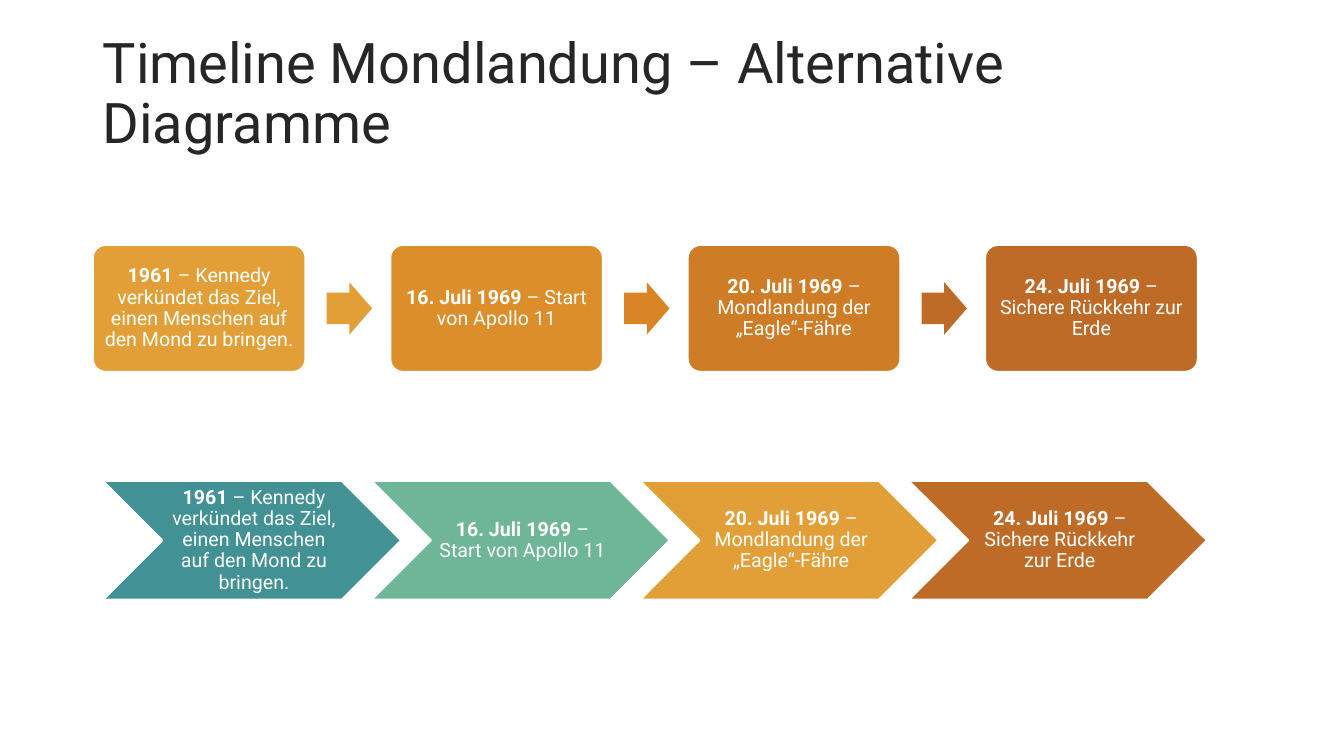
from pptx import Presentation
from pptx import util as u
from pptx.dml.color import RGBColor
from pptx.enum import shapes, text

COLORS = {
    "white": "FFFFFF",
    "ink": "262626",
    "teal": "419195",
    "green": "6EB697",
    "amber": "E29F37",
    "orange": "DC8E2B",
    "deep_orange": "D98526",
    "copper": "CF7C26",
    "rust": "BD6B27",
}

EVENTS = [
    ("1961", " – Kennedy verkündet das Ziel, einen Menschen auf den Mond zu bringen."),
    ("16. Juli 1969", " – Start von Apollo 11"),
    ("20. Juli 1969", " – Mondlandung der „Eagle“-Fähre"),
    ("24. Juli 1969", " – Sichere Rückkehr zur Erde"),
]


def color(name):
    return RGBColor.from_string(COLORS[name])


def write(frame, *parts, size, ink, align=text.PP_ALIGN.LEFT, bold_first=False,
          insets=(0.1, 0.05, 0.1, 0.05), font="Roboto"):
    frame.word_wrap = True
    frame.vertical_anchor = text.MSO_ANCHOR.MIDDLE
    (frame.margin_left, frame.margin_top,
     frame.margin_right, frame.margin_bottom) = map(u.Inches, insets)
    paragraph = frame.paragraphs[0]
    paragraph.alignment = align
    paragraph.line_spacing = 0.9
    for index, part in enumerate(parts):
        run = paragraph.add_run()
        run.text = part
        run.font.name = font
        run.font.size = u.Pt(size)
        run.font.bold = bold_first and index == 0
        run.font.color.rgb = color(ink)


class TimelineSlide:
    def __init__(self, deck):
        self.slide = deck.slides.add_slide(deck.slide_layouts[6])

    def title(self, words, *place):
        heading = self.slide.shapes.add_textbox(*map(u.Inches, place))
        write(heading.text_frame, words, size=40, ink="ink")

    def row(self):
        return self.slide.shapes.add_group_shape().shapes

    def block(self, row, kind, place, fill, adjustments, outlined=False):
        block = row.add_shape(kind, *map(u.Inches, place))
        block.shadow.inherit = False
        for index, value in enumerate(adjustments):
            block.adjustments[index] = value
        block.fill.solid()
        block.fill.fore_color.rgb = color(fill)
        if outlined:
            block.line.color.rgb = color("white")
            block.line.width = u.Pt(1.5)
        else:
            block.line.fill.background()
        return block

    def event(self, row, kind, place, fill, adjustments, event, insets):
        step = self.block(row, kind, place, fill, adjustments, outlined=True)
        write(step.text_frame, *event, size=14, ink="white", bold_first=True,
              align=text.PP_ALIGN.CENTER, insets=insets)

    def process(self, left, top, width, height, pitch, fills, arrow_fills):
        row = self.row()
        arrow_width, arrow_height = 0.45, 0.52
        for index, (event, fill) in enumerate(zip(EVENTS, fills)):
            x = left + index * pitch
            self.event(row, shapes.MSO_SHAPE.ROUNDED_RECTANGLE,
                       (x, top, width, height), fill, [0.1], event, [0.06] * 4)
            if index < len(arrow_fills):
                arrow_place = (x + width + 0.21, top + (height - arrow_height) / 2,
                               arrow_width, arrow_height)
                self.block(row, shapes.MSO_SHAPE.RIGHT_ARROW, arrow_place,
                           arrow_fills[index], [0.6, 0.5])

    def chevrons(self, left, top, width, height, fills):
        row = self.row()
        for index, (event, fill) in enumerate(zip(EVENTS, fills)):
            x = left + index * width * 0.9
            self.event(row, shapes.MSO_SHAPE.CHEVRON, (x, top, width, height),
                       fill, [0.5], event, (0.06, 0.02, 0.02, 0.02))


def main():
    deck = Presentation()
    deck.slide_width, deck.slide_height = u.Inches(13.33), u.Inches(7.5)
    timeline = TimelineSlide(deck)
    timeline.title("Timeline Mondlandung – Alternative Diagramme", 0.92, 0.4, 11.5, 1.09)
    timeline.process(0.92, 2.43, 2.11, 1.26, 2.95,
                     ["amber", "orange", "copper", "rust"],
                     ["amber", "deep_orange", "rust"])
    timeline.chevrons(1.02, 4.77, 2.96, 1.18, ["teal", "green", "amber", "rust"])
    deck.save("out.pptx")


if __name__ == "__main__":
    main()
